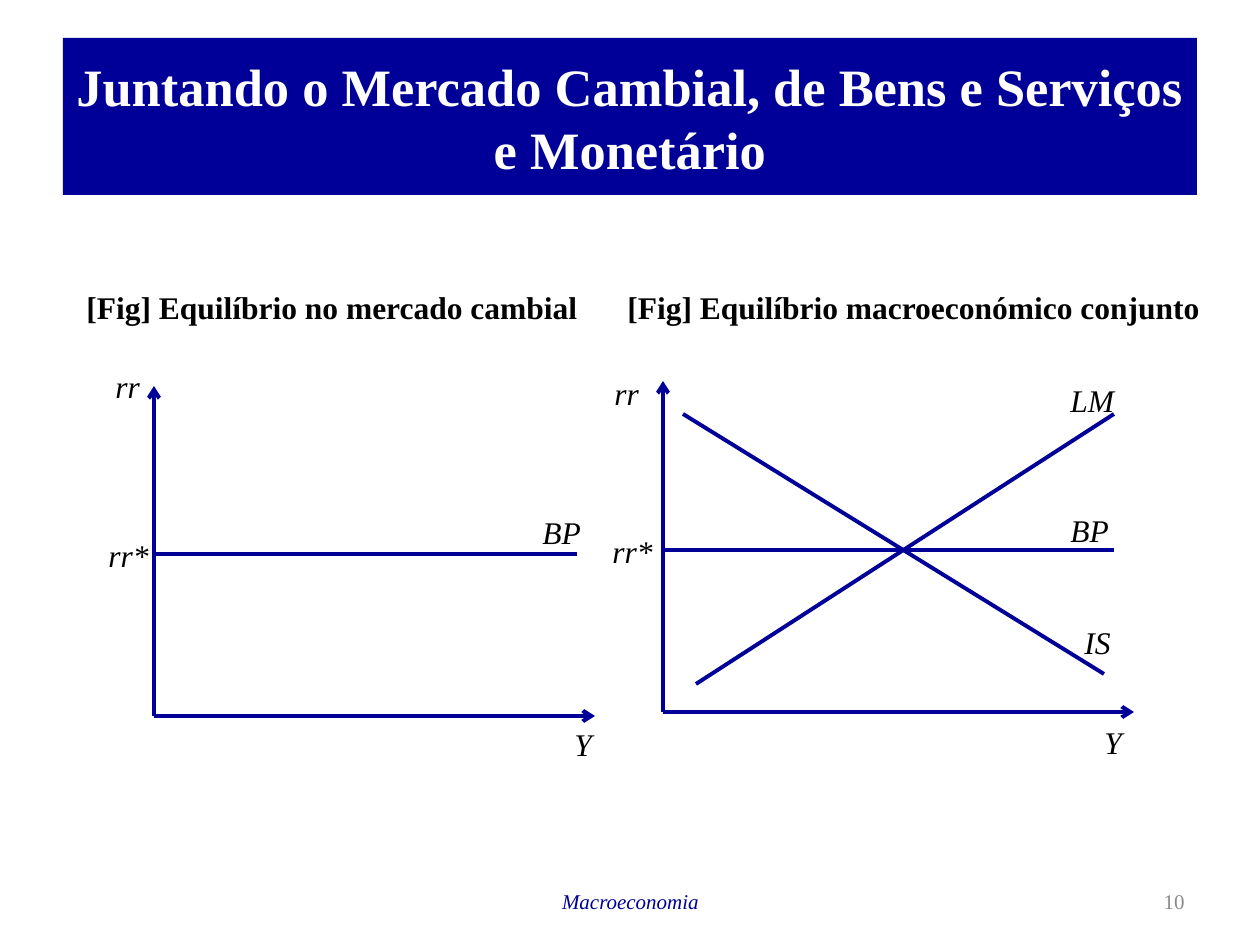
from lxml.etree import SubElement
from pptx import Presentation
from pptx.dml.color import RGBColor
from pptx.enum.shapes import MSO_CONNECTOR, MSO_SHAPE
from pptx.enum.text import MSO_ANCHOR as ANCHOR, PP_ALIGN as ALIGN
from pptx.oxml.ns import qn
from pptx.util import Emu, Pt

PX_PER_INCH = 126
NAVY, BLACK, WHITE, GREY = "000099", "000000", "FFFFFF", "8C8C8C"
FONT = "Times New Roman"
LABEL_HEIGHT = 52


def px(length):
    return Emu(round(length * 914400 / PX_PER_INCH))


def color(hex_value):
    return RGBColor.from_string(hex_value)


def write(frame, text, size, ink, bold=False, italic=False,
          align=ALIGN.LEFT, anchor=ANCHOR.TOP):
    frame.word_wrap = True
    frame.vertical_anchor = anchor
    paragraph = frame.paragraphs[0]
    paragraph.alignment = align
    run = paragraph.add_run()
    run.text = text
    font = run.font
    font.name, font.size, font.bold, font.italic = FONT, Pt(size), bold, italic
    font.color.rgb = color(ink)
    return paragraph


def add_text(shapes, box, text, size, ink, **style):
    frame = shapes.add_textbox(*map(px, box)).text_frame
    return write(frame, text, size, ink, **style)


def add_title(shapes, box, text):
    banner = shapes.add_shape(MSO_SHAPE.RECTANGLE, *map(px, box))
    banner.shadow.inherit = False
    banner.fill.solid()
    banner.fill.fore_color.rgb = color(NAVY)
    banner.line.fill.background()
    write(banner.text_frame, text, 30, WHITE, bold=True,
          align=ALIGN.CENTER, anchor=ANCHOR.MIDDLE)


def add_line(shapes, start, end, arrow=False):
    line = shapes.add_connector(MSO_CONNECTOR.STRAIGHT, *map(px, start + end))
    line.line.color.rgb = color(NAVY)
    line.line.width = Pt(2.25)
    if arrow:
        SubElement(line.line._get_or_add_ln(), qn("a:tailEnd"), type="arrow")
    SubElement(line._element.spPr, qn("a:effectLst"))


def add_graph(slide, origin, top, right, curves, labels, label_width):
    """Draw two arrowed axes from the origin, then curves and their labels."""
    shapes = slide.shapes.add_group_shape().shapes
    x, y = origin
    add_line(shapes, origin, (x, top), arrow=True)
    add_line(shapes, origin, (right, y), arrow=True)
    for start, end in curves:
        add_line(shapes, start, end)
    for text, left, label_top in labels:
        box = (left, label_top, label_width, LABEL_HEIGHT)
        label = add_text(shapes, box, text, 18, BLACK, italic=True)
        label.line_spacing = 1.15
        label.space_after = Pt(10)


def main():
    deck = Presentation()
    deck.slide_width, deck.slide_height = px(1260), px(945)
    slide = deck.slides.add_slide(deck.slide_layouts[6])
    shapes = slide.shapes

    add_title(shapes, (63, 38, 1134, 157),
              "Juntando o Mercado Cambial, de Bens e Serviços e Monetário")
    add_text(shapes, (903, 876, 294, 50), "10", 12, GREY,
             align=ALIGN.RIGHT, anchor=ANCHOR.MIDDLE)
    add_text(shapes, (431, 876, 399, 50), "Macroeconomia", 12, NAVY,
             italic=True, align=ALIGN.CENTER, anchor=ANCHOR.MIDDLE)

    add_graph(slide, origin=(154, 716), top=386, right=595,
              curves=[((154, 554), (577, 554))],
              labels=[("rr", 103, 355), ("rr*", 96, 524),
                      ("BP", 530, 501), ("Y", 562, 713)],
              label_width=88)

    bp, is_curve, lm = (((663, 550), (1114, 550)),
                        ((683, 414), (1104, 674)),
                        ((696, 684), (1114, 414)))
    add_graph(slide, origin=(663, 712), top=381, right=1134,
              curves=[bp, is_curve, lm],
              labels=[("rr", 602, 362), ("rr*", 600, 520),
                      ("BP", 1058, 499), ("Y", 1092, 711),
                      ("LM", 1058, 369), ("IS", 1072, 611)],
              label_width=93)

    for left, caption in ((74, "[Fig] Equilíbrio no mercado cambial"),
                          (615, "[Fig] Equilíbrio macroeconómico conjunto")):
        add_text(shapes, (left, 282, 630, 50), caption, 18, BLACK, bold=True)

    deck.save("out.pptx")


if __name__ == "__main__":
    main()
